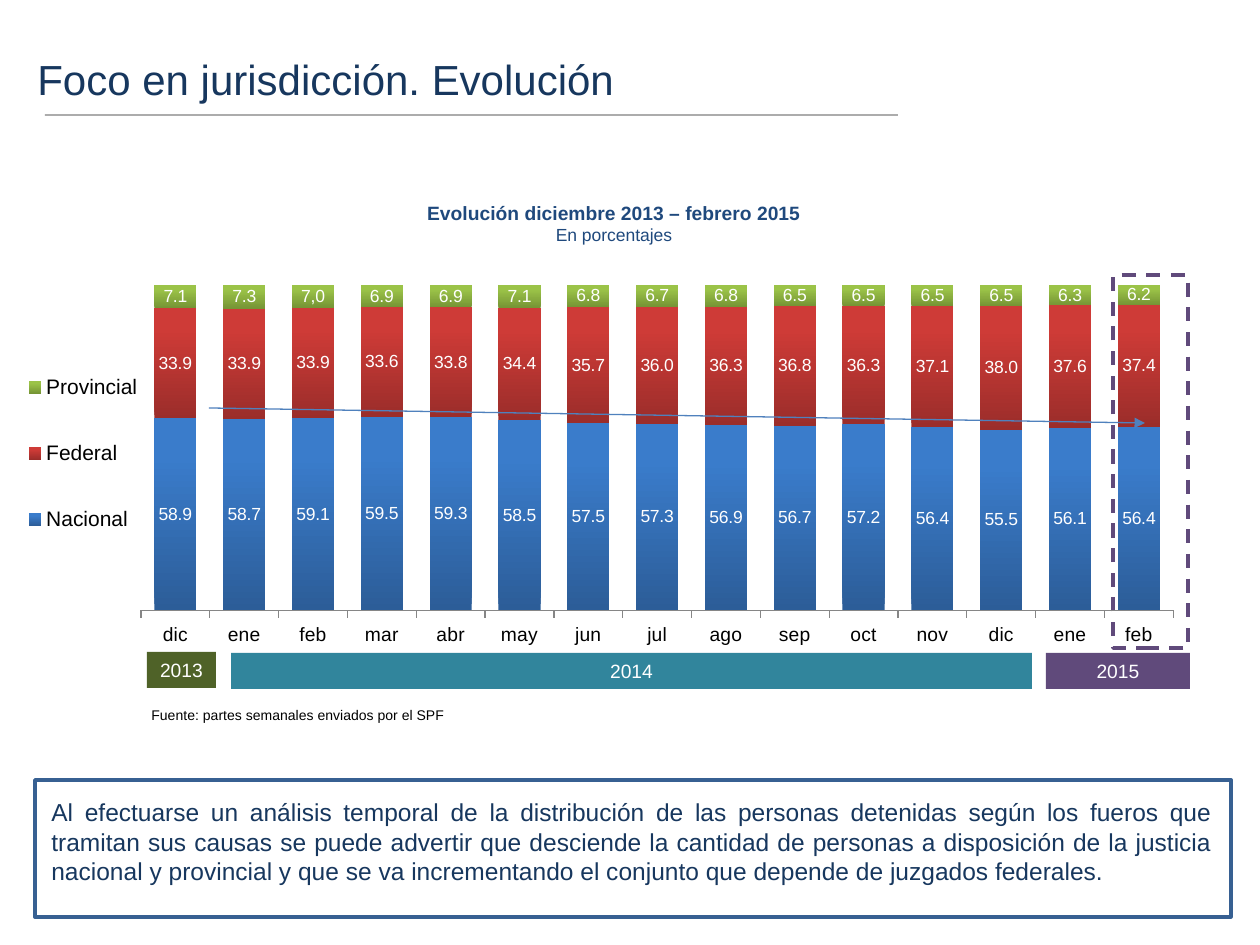
"""Build the slide on the evolution of detainees by jurisdiction."""
import pptx
import pptx.chart.data
import pptx.dml.color
import pptx.enum.chart
import pptx.enum.dml
import pptx.enum.shapes
import pptx.enum.text
import pptx.oxml
import pptx.oxml.ns
import pptx.util

RGBColor = pptx.dml.color.RGBColor
WHITE = RGBColor(0xFF, 0xFF, 0xFF)
BLACK = RGBColor(0x00, 0x00, 0x00)
GREY = RGBColor(0x86, 0x86, 0x86)
NAVY = RGBColor(0x17, 0x37, 0x5E)
TITLE_BLUE = RGBColor(0x1F, 0x49, 0x7D)
FRAME_BLUE = RGBColor(0x37, 0x60, 0x92)
TREND_BLUE = RGBColor(0x4F, 0x81, 0xBD)
PURPLE = RGBColor(0x60, 0x4A, 0x7B)
TEAL = RGBColor(0x31, 0x85, 0x9C)
OLIVE = RGBColor(0x4F, 0x62, 0x28)
BLUES = (RGBColor(0x2C, 0x5D, 0x98), RGBColor(0x3A, 0x7C, 0xCB))
REDS = (RGBColor(0x9B, 0x2D, 0x2A), RGBColor(0xCE, 0x3B, 0x37))
GREENS = (RGBColor(0x76, 0x95, 0x35), RGBColor(0x9B, 0xC3, 0x48))

PX = 914400 / 126
ALIGN = pptx.enum.text.PP_ALIGN
DRAWING_NS = pptx.oxml.ns.nsdecls("a")
CHART_NS = pptx.oxml.ns.nsdecls("c")


def px(*lengths):
    return [pptx.util.Emu(round(length * PX)) for length in lengths]


def style_font(font, size, color, bold=False):
    values = {"name": "Arial", "size": pptx.util.Pt(size), "bold": bold}
    for name, value in values.items():
        setattr(font, name, value)
    font.color.rgb = color


presentation = pptx.Presentation()
presentation.slide_width, presentation.slide_height = px(1260, 945)
slide = presentation.slides.add_slide(presentation.slide_layouts[6])

rectangles = [
    ((1113, 275, 75, 373), None, PURPLE, ""),
    ((231, 653, 801, 36), TEAL, None, "2014"),
    ((35, 780, 1196, 137), WHITE, FRAME_BLUE, ""),
    ((147, 652, 69, 36), OLIVE, None, "2013"),
    ((1046, 653, 144, 36), PURPLE, None, "2015"),
]
for place, fill_color, line_color, text in rectangles:
    shape = slide.shapes.add_shape(pptx.enum.shapes.MSO_SHAPE.RECTANGLE, *px(*place))
    shape.shadow.inherit = False
    if fill_color is None:
        shape.fill.background()
        shape.line.dash_style = pptx.enum.dml.MSO_LINE.DASH
    else:
        shape.fill.solid()
        shape.fill.fore_color.rgb = fill_color
    if line_color is None:
        shape.line.fill.background()
    else:
        shape.line.color.rgb = line_color
        shape.line.width = pptx.util.Pt(2)
    if text:
        paragraph = shape.text_frame.paragraphs[0]
        paragraph.text = text
        paragraph.alignment = ALIGN.CENTER
        style_font(paragraph.runs[0].font, 11, WHITE)

categories = "dic ene feb mar abr may jun jul ago sep oct nov dic ene feb".split()
series_values = {
    "Nacional": (58.9, 58.7, 59.1, 59.5, 59.3, 58.5, 57.5, 57.3,
                 56.9, 56.7, 57.2, 56.4, 55.5, 56.1, 56.4),
    "Federal": (33.9, 33.9, 33.9, 33.6, 33.8, 34.4, 35.7, 36.0,
                36.3, 36.8, 36.3, 37.1, 38.0, 37.6, 37.4),
    "Provincial": (7.1, 7.3, 7.0, 6.9, 6.9, 7.1, 6.8, 6.7,
                   6.8, 6.5, 6.5, 6.5, 6.5, 6.3, 6.2),
}
chart_data = pptx.chart.data.CategoryChartData(number_format="0.0")
chart_data.categories = categories
for name, values in series_values.items():
    chart_data.add_series(name, values)
chart = slide.shapes.add_chart(
    pptx.enum.chart.XL_CHART_TYPE.COLUMN_STACKED_100, *px(25, 273, 1160, 397), chart_data
).chart
chart.has_title = False
style_font(chart.font, 11, BLACK)
chart.value_axis.visible = False
chart.value_axis.has_major_gridlines = False
category_axis = chart.category_axis
category_axis.major_tick_mark = pptx.enum.chart.XL_TICK_MARK.OUTSIDE
category_axis.format.line.color.rgb = GREY
style_font(category_axis.tick_labels.font, 11, BLACK)

plot = chart.plots[0]
for name, value in {"gap_width": 63, "overlap": 100, "vary_by_categories": False}.items():
    setattr(plot, name, value)
for series, colors in zip(plot.series, (BLUES, REDS, GREENS)):
    fill = series.format.fill
    fill.gradient()
    fill.gradient_angle = 90
    for stop, color, position in zip(fill.gradient_stops, colors, (0, 0.8)):
        stop.color.rgb = color
        stop.position = position
    labels = series.data_labels
    label_format = {"show_value": True, "number_format": "0.0", "number_format_is_linked": False}
    for name, value in label_format.items():
        setattr(labels, name, value)
    style_font(labels.font, 10, WHITE)
label_paragraph = plot.series[2].points[2].data_label.text_frame.paragraphs[0]
label_run = label_paragraph.add_run()
label_run.text = "7,0"
style_font(label_run.font, 10, WHITE)

chart.has_legend = True
chart.legend.position = pptx.enum.chart.XL_LEGEND_POSITION.RIGHT
chart.legend.include_in_layout = False
style_font(chart.legend.font, 12, BLACK)
chart_root = chart.element
layouts = [
    ("c:plotArea", 0, '<c:layoutTarget val="inner"/>', (0.1, 0.03, 0.89, 0.82)),
    ("c:legend", 1, "", (0, 0.15, 0.1, 0.61)),
]
for tag, index, target, (left, top, width, height) in layouts:
    parent = chart_root.find(".//" + pptx.oxml.ns.qn(tag))
    for old_layout in parent.findall(pptx.oxml.ns.qn("c:layout")):
        parent.remove(old_layout)
    parent.insert(index, pptx.oxml.parse_xml(
        f'<c:layout {CHART_NS}><c:manualLayout>{target}'
        f'<c:xMode val="edge"/><c:yMode val="edge"/><c:x val="{left}"/><c:y val="{top}"/>'
        f'<c:w val="{width}"/><c:h val="{height}"/></c:manualLayout></c:layout>'))

summary = (
    "Al efectuarse un análisis temporal de la distribución de las personas detenidas según "
    "los fueros que tramitan sus causas se puede advertir que desciende la cantidad de personas "
    "a disposición de la justicia nacional y provincial y que se va incrementando el conjunto "
    "que depende de juzgados federales."
)
text_boxes = [
    ((25, 47, 932, 78), True, ALIGN.LEFT, [("Foco en jurisdicción. Evolución", 24, NAVY, False)]),
    ((39, 791, 1186, 102), True, ALIGN.JUSTIFY, [(summary, 14, NAVY, False)]),
    ((387, 195, 454, 57), True, ALIGN.CENTER, [
        ("Evolución diciembre 2013 – febrero 2015", 11, TITLE_BLUE, True),
        ("En porcentajes", 10, TITLE_BLUE, False)]),
    ((139, 700, 323, 30), False, ALIGN.LEFT, [
        ("Fuente: partes semanales enviados por el SPF", 8, BLACK, False)]),
]
for place, wrap, alignment, lines in text_boxes:
    text_frame = slide.shapes.add_textbox(*px(*place)).text_frame
    text_frame.word_wrap = wrap
    text_frame.text = "\n".join(line[0] for line in lines)
    for paragraph, (text, size, color, bold) in zip(text_frame.paragraphs, lines):
        paragraph.alignment = alignment
        style_font(paragraph.runs[0].font, size, color, bold)

connectors = []
for ends, color in (((45, 115, 898, 115), BLACK), ((209, 408, 1145, 423), TREND_BLUE)):
    connector = slide.shapes.add_connector(
        pptx.enum.shapes.MSO_CONNECTOR.STRAIGHT, *px(*ends))
    connector.line.color.rgb = color
    connector.line.width = pptx.util.Pt(0.75)
    connector._element.spPr.append(pptx.oxml.parse_xml(f"<a:effectLst {DRAWING_NS}/>"))
    connectors.append(connector)
title_rule, trend_arrow = connectors
rule_color = title_rule._element.spPr.find(".//" + pptx.oxml.ns.qn("a:srgbClr"))
rule_color.append(pptx.oxml.parse_xml(f'<a:alpha {DRAWING_NS} val="50000"/>'))
trend_arrow.line._get_or_add_ln().append(
    pptx.oxml.parse_xml(f'<a:tailEnd {DRAWING_NS} type="triangle"/>'))

presentation.save("out.pptx")
